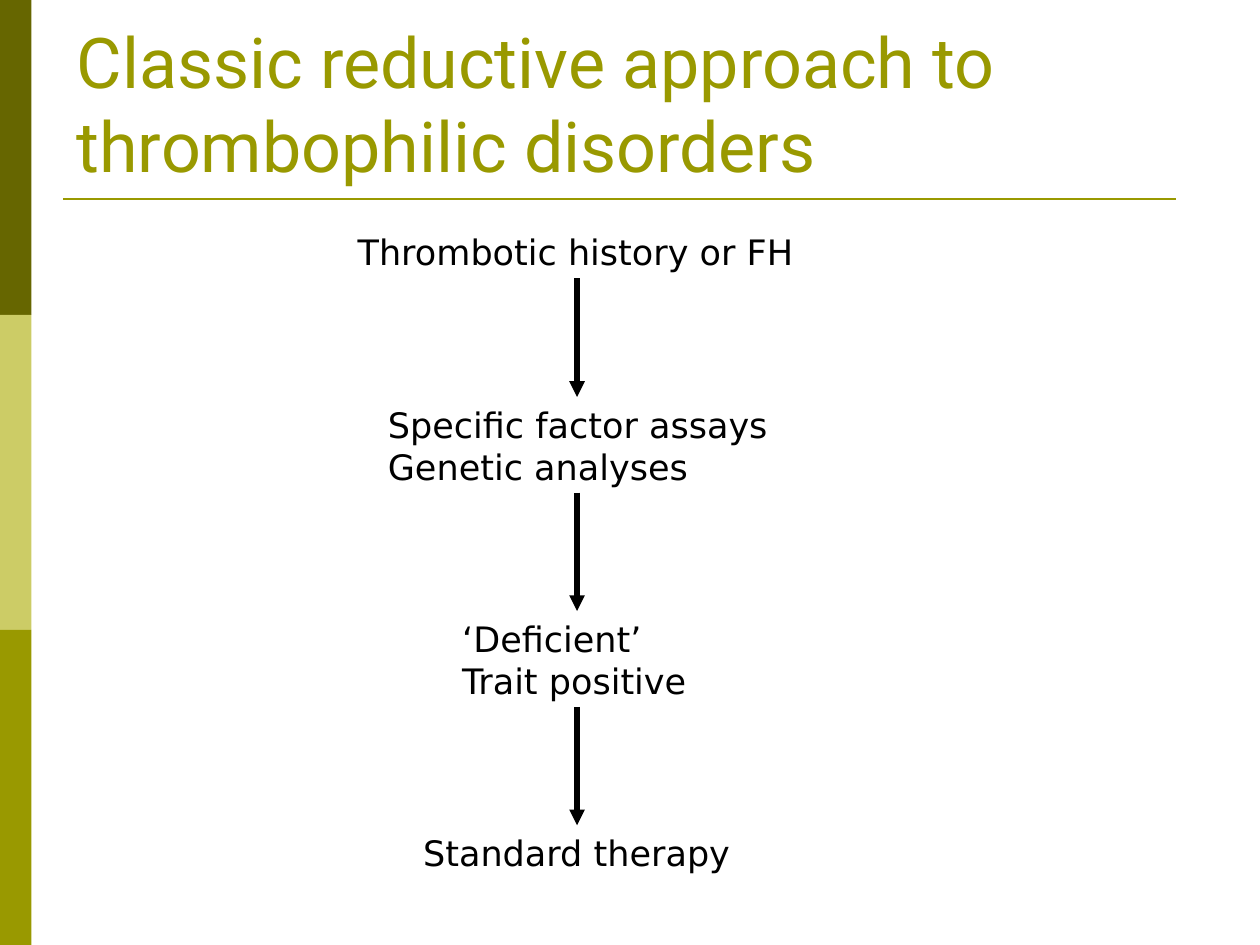
"""Build a slide showing the classic reductive approach to thrombophilic disorders."""
import pptx
import pptx.dml.color
import pptx.enum.shapes
import pptx.enum.text
import pptx.oxml
import pptx.util
from pptx.util import Inches

COLOURS = {"dark": "666600", "light": "CCCC66", "olive": "999900", "text": "000000"}


def add_line(page, start, end, colour, width):
    line = page.shapes.add_connector(
        pptx.enum.shapes.MSO_CONNECTOR.STRAIGHT, *map(Inches, start + end))
    line.line.color.rgb = pptx.dml.color.RGBColor.from_string(COLOURS[colour])
    line.line.width = pptx.util.Pt(width)
    pptx.oxml.xmlchemy.OxmlElement("a:effectLst")
    line._element.spPr.append(pptx.oxml.xmlchemy.OxmlElement("a:effectLst"))
    return line


def add_text(page, bounds, lines, font, size, colour):
    box = page.shapes.add_textbox(*map(Inches, bounds))
    frame = box.text_frame
    frame.text = "\n".join(lines)
    for para in frame.paragraphs:
        para.font.name = font
        para.font.size = pptx.util.Pt(size)
        para.font.color.rgb = pptx.dml.color.RGBColor.from_string(COLOURS[colour])
    return frame


deck = pptx.Presentation()
deck.slide_width = Inches(10)
deck.slide_height = Inches(7.5)
page = deck.slides.add_slide(deck.slide_layouts[6])

for index, name in enumerate(("dark", "light", "olive")):
    band = page.shapes.add_shape(
        pptx.enum.shapes.MSO_SHAPE.RECTANGLE,
        0, Inches(2.5 * index), Inches(0.25), Inches(2.5))
    band.shadow.inherit = False
    band.fill.solid()
    band.fill.fore_color.rgb = pptx.dml.color.RGBColor.from_string(COLOURS[name])
    band.line.fill.background()

add_line(page, (0.5, 1.58), (9.33, 1.58), "olive", 1.5)

title = add_text(page, (0.51, 0.28, 9, 1.25),
                 ["Classic reductive approach to thrombophilic disorders"],
                 "Roboto", 40, "olive")
title.word_wrap = True
title.vertical_anchor = pptx.enum.text.MSO_ANCHOR.BOTTOM

steps = [
    (2.74, 1.78, 3.72, 0.44, ["Thrombotic history or FH"]),
    (2.98, 3.15, 3.22, 0.77, ["Specific factor assays", "Genetic analyses"]),
    (3.57, 4.85, 2, 0.77, ["‘Deficient’", "Trait positive"]),
    (3.26, 6.55, 2.66, 0.44, ["Standard therapy"]),
]
for *bounds, lines in steps:
    step = add_text(page, bounds, lines, "DejaVu Sans", 20, "text")
    step.word_wrap = False
    step.auto_size = pptx.enum.text.MSO_AUTO_SIZE.SHAPE_TO_FIT_TEXT

for step in steps[1:]:
    top = step[1]
    arrow = add_line(page, (4.58, top - 0.94), (4.58, top), "text", 3)
    head = pptx.oxml.xmlchemy.OxmlElement("a:tailEnd")
    head.set("type", "triangle")
    arrow.line._get_or_add_ln().append(head)

deck.save("out.pptx")
